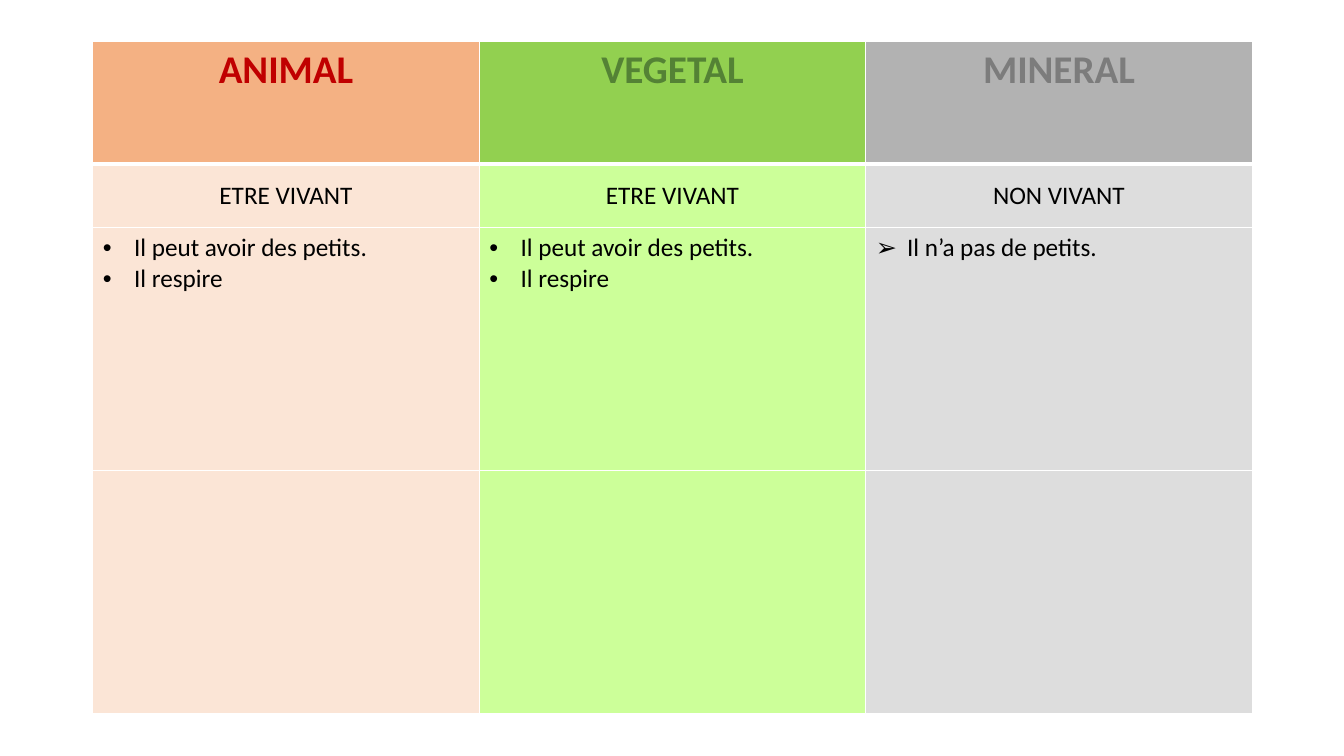
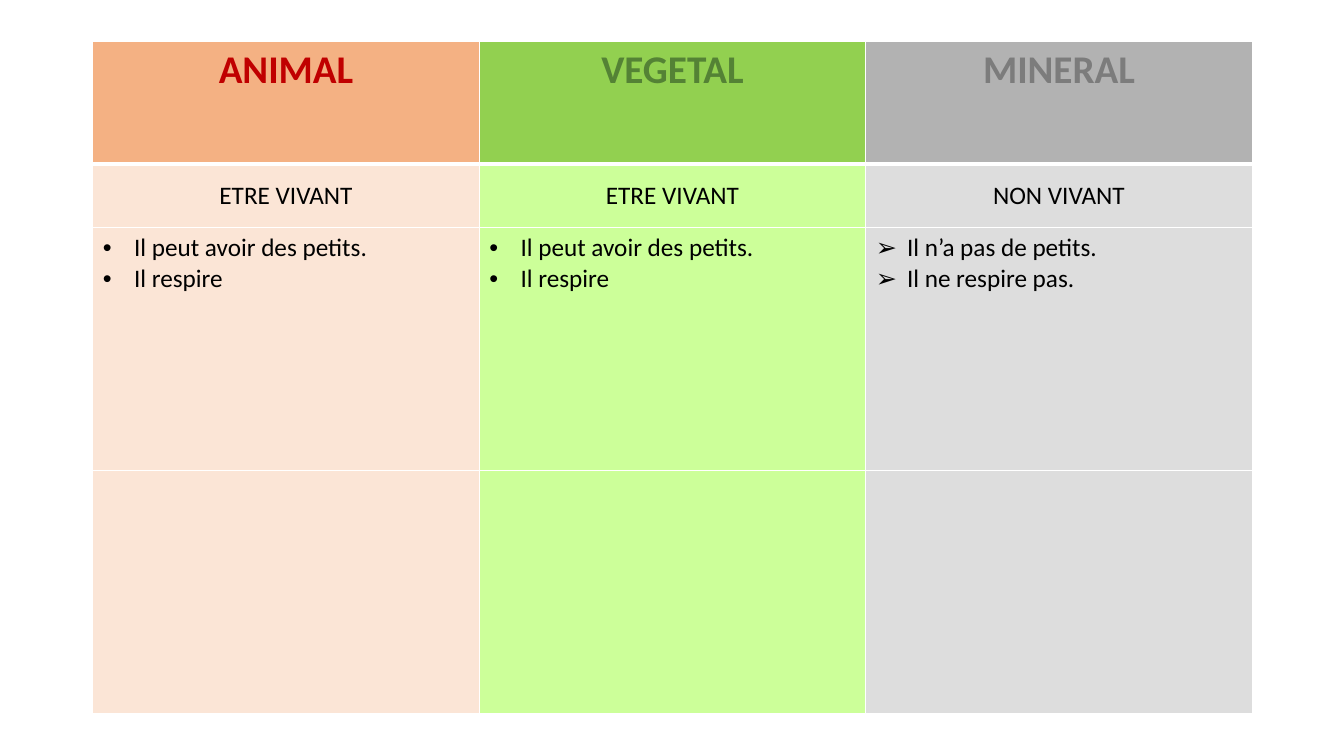
"""Build two slides that sort living and non-living things in a table."""
import pptx
import pptx.dml.color
import pptx.enum.text
import pptx.oxml
import pptx.oxml.ns
import pptx.util
from lxml import etree

Inches = pptx.util.Inches
Pt = pptx.util.Pt
CENTER = pptx.enum.text.PP_ALIGN.CENTER
MIDDLE = pptx.enum.text.MSO_ANCHOR.MIDDLE

FONT, BLACK, WHITE = "Calibri", "000000", "FFFFFF"
LEFT, TOP, WIDTH = 0.92, 0.41, 11.5
ROWS = [1.22, 0.63, 2.41, 2.41]
INDENT = 0.31

KINDS = [
    {"title": "ANIMAL", "ink": "C00000", "head": "F4B183", "body": "FBE5D6",
     "state": "ETRE VIVANT", "mark": "•"},
    {"title": "VEGETAL", "ink": "548235", "head": "92D050", "body": "CCFF99",
     "state": "ETRE VIVANT", "mark": "•"},
    {"title": "MINERAL", "ink": "7C7C7C", "head": "B2B2B2", "body": "DDDDDD",
     "state": "NON VIVANT", "mark": "➢"},
]
ALIVE = ["Il peut avoir des petits.", "Il respire"]
SLIDES = [
    [ALIVE, ALIVE, ["Il n’a pas de petits."]],
    [ALIVE, ALIVE, ["Il n’a pas de petits.", "Il ne respire pas."]],
]


def color(code):
    return pptx.dml.color.RGBColor.from_string(code)


def add(parent, tag, **attrs):
    return etree.SubElement(parent, pptx.oxml.ns.qn(tag), attrs)


def border(cell, row):
    props = cell._tc.get_or_add_tcPr()
    thick = {"T": 3 if row == 1 else 1, "B": 3 if row == 0 else 1}
    for side in "LRTB":
        line = add(props, "a:ln" + side, w=str(Pt(thick.get(side, 1))))
        add(add(line, "a:solidFill"), "a:srgbClr", val=WHITE)


def bullet(para, mark):
    props = para._p.get_or_add_pPr()
    props.set("marL", str(Inches(INDENT)))
    props.set("indent", str(-Inches(INDENT)))
    add(props, "a:buFont", typeface="Arial")
    add(props, "a:buChar", char=mark)


def write(cell, lines, size=18, ink=BLACK, bold=False, align=None, mark=None):
    cell.text_frame.text = "\n".join(lines)
    for para in cell.text_frame.paragraphs:
        para.alignment = align
        if mark:
            bullet(para, mark)
        for run in para.runs:
            run.font.name = FONT
            run.font.size = Pt(size)
            run.font.bold = bold
            run.font.color.rgb = color(ink)


def build(slide, facts):
    frame = slide.shapes.add_table(len(ROWS), len(KINDS), Inches(LEFT), Inches(TOP),
                                   Inches(WIDTH), Inches(sum(ROWS)))
    table = frame.table
    for row, height in zip(table.rows, ROWS):
        row.height = Inches(height)
    for col, (kind, lines) in enumerate(zip(KINDS, facts)):
        table.columns[col].width = Inches(WIDTH / len(KINDS))
        cells = [table.cell(row, col) for row in range(len(ROWS))]
        for row, cell in enumerate(cells):
            border(cell, row)
            cell.fill.solid()
            cell.fill.fore_color.rgb = color(kind["body" if row else "head"])
        write(cells[0], [kind["title"]], 28, kind["ink"], True, CENTER)
        write(cells[1], [kind["state"]], align=CENTER)
        cells[1].vertical_anchor = MIDDLE
        write(cells[2], lines, mark=kind["mark"])


def main():
    deck = pptx.Presentation()
    deck.slide_width, deck.slide_height = Inches(13.33), Inches(7.5)
    for facts in SLIDES:
        build(deck.slides.add_slide(deck.slide_layouts[6]), facts)
    deck.save("out.pptx")


if __name__ == "__main__":
    main()
